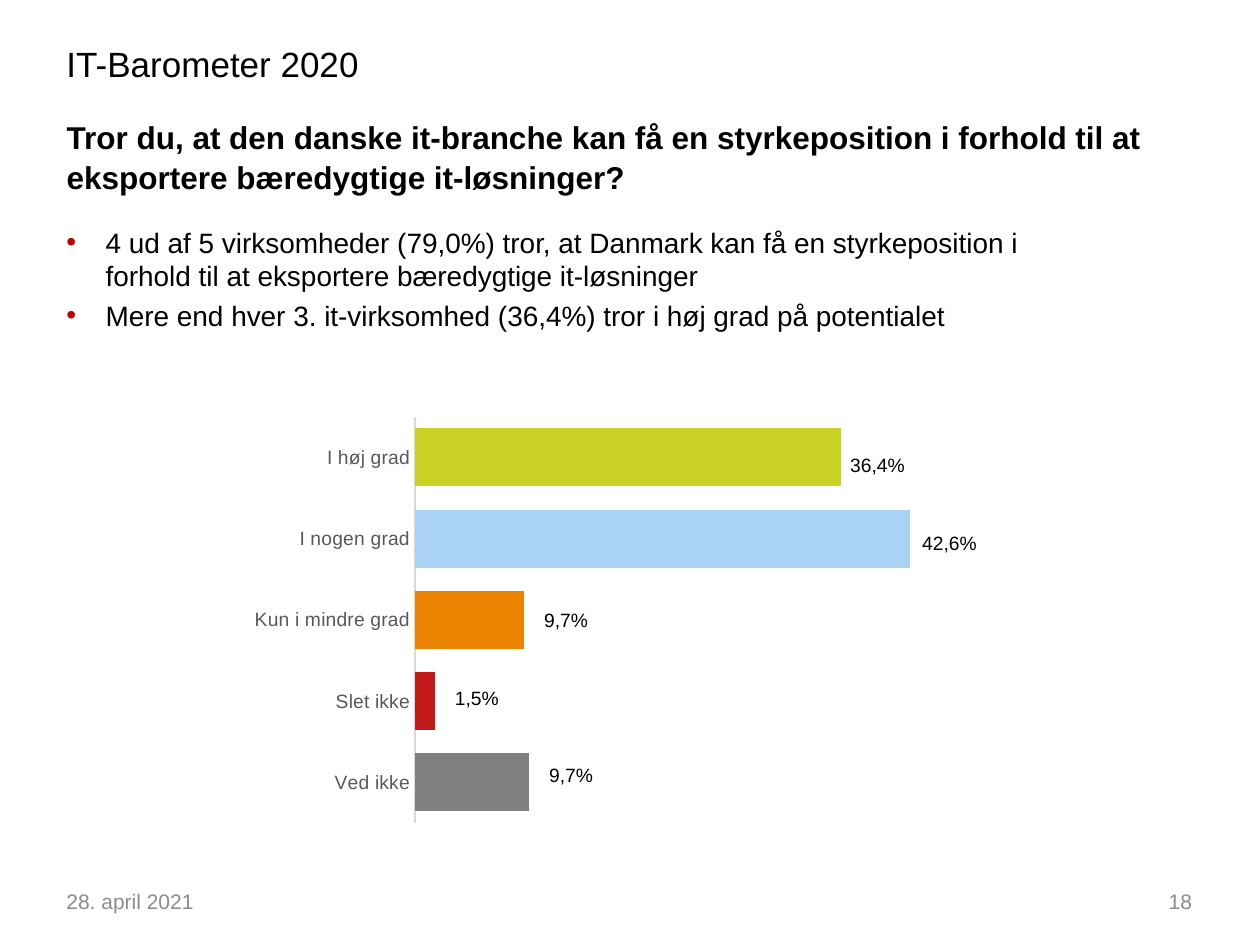
from lxml.etree import SubElement
from pptx import Presentation
from pptx.chart.data import CategoryChartData
from pptx.dml.color import RGBColor
from pptx.enum.chart import XL_CHART_TYPE, XL_TICK_MARK
from pptx.enum.text import MSO_ANCHOR, MSO_AUTO_SIZE, PP_ALIGN
from pptx.oxml import parse_xml
from pptx.oxml.ns import nsdecls, qn
from pptx.util import Cm, Pt

BLACK = RGBColor(0x00, 0x00, 0x00)
LABEL_GREY = RGBColor(0x59, 0x59, 0x59)
AXIS_GREY = RGBColor(0xD9, 0xD9, 0xD9)
FOOTER_GREY = RGBColor(0x8C, 0x8C, 0x8C)
BULLET_RED = RGBColor(0xC0, 0x00, 0x00)
GREY = RGBColor(0x80, 0x80, 0x80)
RED = RGBColor(0xC2, 0x19, 0x19)
ORANGE = RGBColor(0xE9, 0x83, 0x00)
BLUE = RGBColor(0xAA, 0xD2, 0xF5)
LIME = RGBColor(0xC8, 0xD1, 0x24)

# Answers from bottom to top: category, bar length, colour
ANSWERS = [
    ("Ved ikke", 23, GREY),
    ("Slet ikke", 4, RED),
    ("Kun i mindre grad", 22, ORANGE),
    ("I nogen grad", 100, BLUE),
    ("I høj grad", 86, LIME),
]
# Shares from top to bottom: text, left edge in cm
SHARES = [("36,4%", 16.89), ("42,6%", 18.34), ("9,7%", 10.72),
          ("1,5%", 8.92), ("9,7%", 10.82)]
SHARE_TOP, SHARE_STEP = 9.02, 1.56


class SurveySlide:
    """Holds the text style and the page being filled."""

    def __init__(self, page, font_name="Arial"):
        self.page = page
        self.font_name = font_name

    def style(self, font, size, color, bold=False):
        font.name = self.font_name
        font.size = Pt(size)
        font.bold = bold
        font.color.rgb = color

    def title(self, left, top, width, height, text, size):
        box = self.page.shapes.title
        box.left, box.top, box.width, box.height = map(Cm, (left, top, width, height))
        frame = box.text_frame
        frame.text = text
        frame.word_wrap = True
        frame.auto_size = MSO_AUTO_SIZE.NONE
        frame.vertical_anchor = MSO_ANCHOR.TOP
        para = frame.paragraphs[0]
        para.alignment = PP_ALIGN.LEFT
        para.line_spacing = 1.05
        self.style(para.runs[0].font, size, BLACK, bold=True)

    def text(self, left, top, width, height, text, size, color=BLACK,
             align=PP_ALIGN.LEFT, anchor=MSO_ANCHOR.TOP, wrap=True):
        box = self.page.shapes.add_textbox(*map(Cm, (left, top, width, height)))
        frame = box.text_frame
        frame.text = text
        frame.word_wrap = wrap
        frame.vertical_anchor = anchor
        if not wrap:
            frame.auto_size = MSO_AUTO_SIZE.SHAPE_TO_FIT_TEXT
        for para in frame.paragraphs:
            para.alignment = align
            for span in para.runs:
                self.style(span.font, size, color)
        return box

    def bullets(self, left, top, width, height, lines, size):
        box = self.text(left, top, width, height, "\n".join(lines), size)
        for number, para in enumerate(box.text_frame.paragraphs):
            properties = para._p.get_or_add_pPr()
            properties.set("marL", str(Cm(0.79)))
            properties.set("indent", str(-Cm(0.79)))
            if number:
                para.space_before = Pt(0.2 * size)
            color = SubElement(properties, qn("a:buClr"))
            SubElement(color, qn("a:srgbClr")).set("val", str(BULLET_RED))
            SubElement(properties, qn("a:buFont")).set("typeface", self.font_name)
            SubElement(properties, qn("a:buChar")).set("char", "•")

    def bar_chart(self, left, top, width, height, answers):
        data = CategoryChartData()
        data.categories = [name for name, _, _ in answers]
        data.add_series("Series 1", [value for _, value, _ in answers])
        chart = self.page.shapes.add_chart(
            XL_CHART_TYPE.BAR_CLUSTERED, *map(Cm, (left, top, width, height)), data).chart
        chart.has_legend = False
        chart.has_title = False
        self.style(chart.font, 10, BLACK)

        # Axes
        category_axis = chart.category_axis
        category_axis.major_tick_mark = XL_TICK_MARK.NONE
        category_axis.format.line.color.rgb = AXIS_GREY
        category_axis.format.line.width = Pt(0.75)
        self.style(category_axis.tick_labels.font, 11, LABEL_GREY)
        value_axis = chart.value_axis
        value_axis.minimum_scale = 0
        value_axis.maximum_scale = 105
        value_axis.has_major_gridlines = False
        value_axis.tick_labels.number_format = "0.00%"
        value_axis.tick_labels.number_format_is_linked = False
        value_axis.visible = False

        # Bars
        plot = chart.plots[0]
        plot.gap_width = 40
        plot.overlap = -25
        plot.vary_by_categories = False
        series = plot.series[0]
        series.format.fill.solid()
        series.format.fill.fore_color.rgb = RED
        for number, (_, _, color) in enumerate(answers):
            fill = series.points[number].format.fill
            fill.solid()
            fill.fore_color.rgb = color

        # Fixed plot area
        plot_area = chart._chartSpace.chart.plotArea
        for layout in plot_area.findall(qn("c:layout")):
            plot_area.remove(layout)
        places = "".join(f'<c:{key} val="{value}"/>' for key, value in (
            ("layoutTarget", "inner"), ("xMode", "edge"), ("yMode", "edge"),
            ("x", 0.246), ("y", 0.02), ("w", 0.733), ("h", 0.96)))
        plot_area.insert(0, parse_xml(
            f'<c:layout {nsdecls("c")}><c:manualLayout>{places}</c:manualLayout></c:layout>'))


def main():
    deck = Presentation()
    deck.slide_width, deck.slide_height = Cm(25.4), Cm(19.05)
    slide = SurveySlide(deck.slides.add_slide(deck.slide_layouts[5]))

    # Headings
    slide.text(1.09, 0.74, 8.05, 1.02, "IT-Barometer 2020", 20)
    slide.title(1.09, 2.21, 22.86, 1.4,
                "Tror du, at den danske it-branche kan få en styrkeposition i forhold "
                "til at eksportere bæredygtige it-løsninger?", 18)

    # Findings
    slide.bullets(1.09, 4.42, 20.9, 3.1, [
        "4 ud af 5 virksomheder (79,0%) tror, at Danmark kan få en styrkeposition "
        "i forhold til at eksportere bæredygtige it-løsninger",
        "Mere end hver 3. it-virksomhed (36,4%) tror i høj grad på potentialet",
    ], 16)

    # Chart with its shares
    slide.bar_chart(4.85, 8.23, 14.3, 8.53, ANSWERS)
    for row, (share, left) in enumerate(SHARES):
        width = 1.63 if len(share) > 4 else 1.4
        slide.text(left, SHARE_TOP + row * SHARE_STEP, width, 0.74, share, 11, wrap=False)

    # Footer
    for left, text, align in ((1.09, "28. april 2021", PP_ALIGN.LEFT),
                              (18.36, "18", PP_ALIGN.RIGHT)):
        slide.text(left, 17.65, 5.92, 1.02, text, 12, FOOTER_GREY, align, MSO_ANCHOR.MIDDLE)

    deck.save("out.pptx")


if __name__ == "__main__":
    main()
